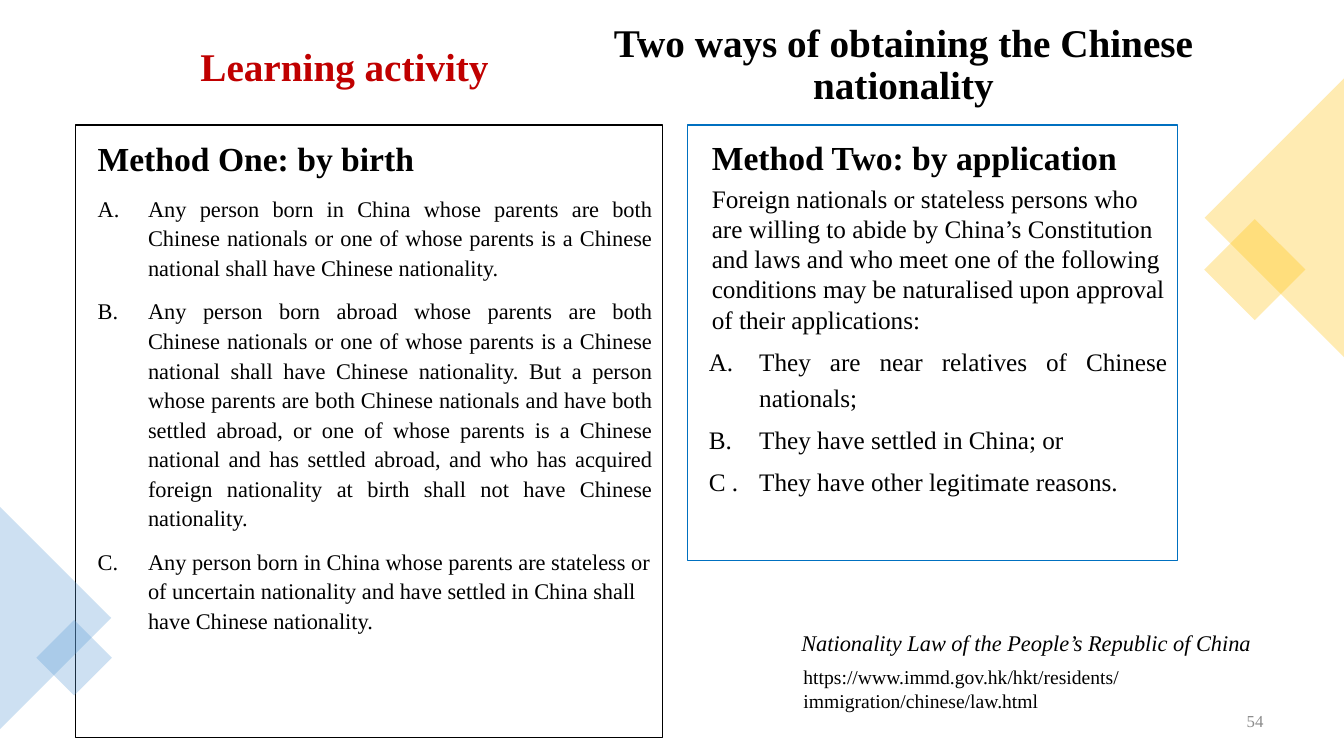
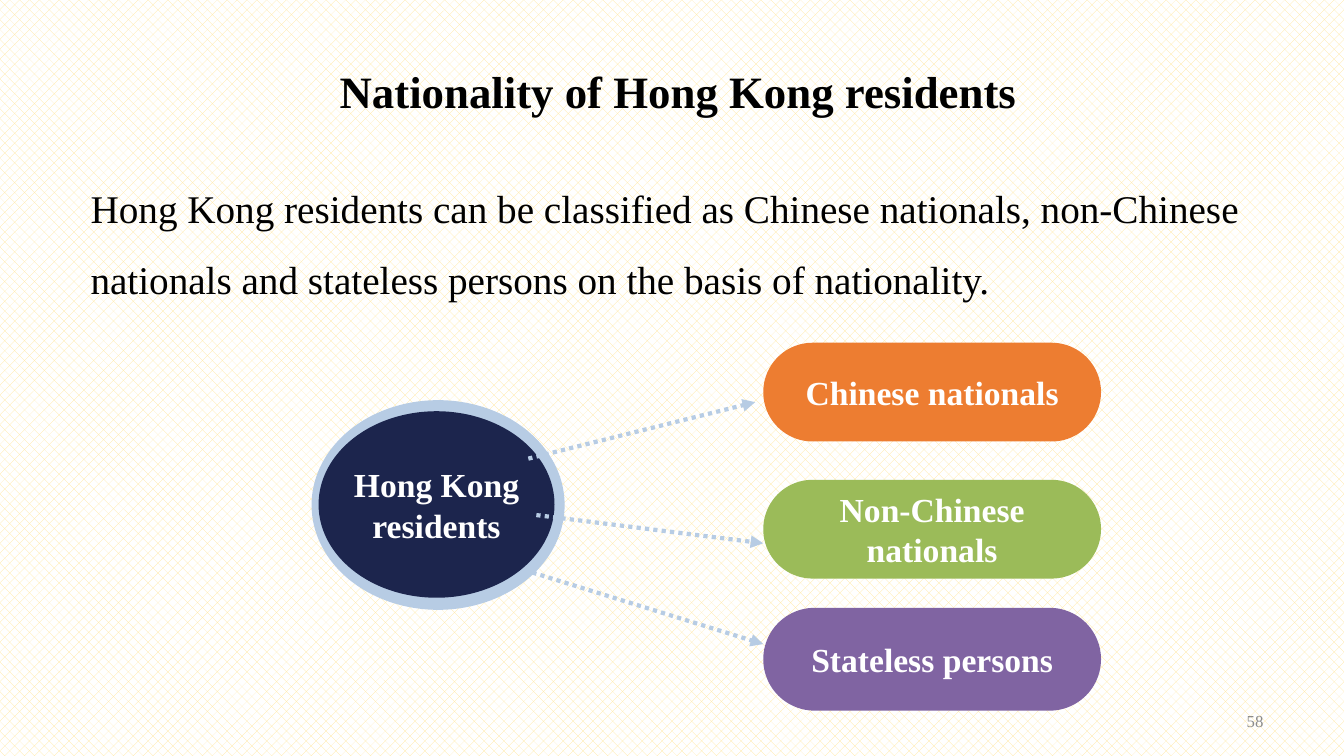
import pptx
import pptx.util
import pptx.dml.color
import pptx.enum.dml
import pptx.enum.shapes
import pptx.enum.text
import lxml.etree
from dataclasses import dataclass

Inches, Pt = pptx.util.Inches, pptx.util.Pt
Shape = pptx.enum.shapes.MSO_SHAPE
Align = pptx.enum.text.PP_ALIGN
Anchor = pptx.enum.text.MSO_ANCHOR


@dataclass(frozen=True)
class Theme:
    font: str = "Times New Roman"
    ink: str = "000000"
    white: str = "FFFFFF"
    cream: str = "FFE699"
    gray: str = "8C8C8C"
    red: str = "C00000"
    blue: str = "0070C0"
    gold: str = "FFC000"
    sky: str = "5B9BD5"
    pale: str = "B7CCE4"
    navy: str = "1C254D"
    orange: str = "ED7D31"
    green: str = "9BBB59"
    purple: str = "8064A2"
    title: int = 32
    large: int = 28
    head: int = 24
    text: int = 18
    small: int = 16
    link: int = 14
    note: int = 12


T = Theme()


def rgb(code):
    return pptx.dml.color.RGBColor.from_string(code)


def sub(node, tag, **attrs):
    """Add a drawing element to an XML node."""
    name = pptx.oxml.ns.qn("a:" + tag)
    return lxml.etree.SubElement(node, name, **attrs)


# Text
def para(frame, text, size, color=T.ink, bold=False, italic=False,
         align=Align.LEFT, lines=None, before=0, left=0, hang=0,
         number=False, tab=False):
    first = not frame.paragraphs[0].runs
    p = frame.paragraphs[0] if first else frame.add_paragraph()
    props = p._p.get_or_add_pPr()
    if left:
        props.set("marL", str(Inches(left)))
        props.set("indent", str(Inches(-hang)))
    if number:
        sub(props, "buAutoNum", type="alphaUcPeriod")
    if tab:
        stops = sub(props, "tabLst")
        sub(stops, "tab", pos=str(Inches(left)), algn="l")
    p.alignment = align
    if lines:
        p.line_spacing = lines
    if before and not first:
        p.space_before = Pt(before)
    run = p.add_run()
    run.text = text
    font = run.font
    font.name, font.size = T.font, Pt(size)
    font.bold, font.italic = bold, italic
    font.color.rgb = rgb(color)


def setup(frame, anchor=Anchor.TOP, pad=(0.1, 0.05, 0.1, 0.05), wrap=True):
    frame.word_wrap = wrap
    frame.vertical_anchor = anchor
    (frame.margin_left, frame.margin_top,
     frame.margin_right, frame.margin_bottom) = map(Inches, pad)
    return frame


def label(slide, box, text, size, anchor=Anchor.TOP, wrap=True, **style):
    shape = slide.shapes.add_textbox(*map(Inches, box))
    para(setup(shape.text_frame, anchor, wrap=wrap), text, size, **style)


# Shapes
def block(slide, kind, box, fill=None, line=None, width=1, turn=0, alpha=None):
    shape = slide.shapes.add_shape(kind, *map(Inches, box))
    shape.shadow.inherit = False
    shape.rotation = turn
    if fill:
        shape.fill.solid()
        shape.fill.fore_color.rgb = rgb(fill)
        if alpha:
            tint = shape.fill._xPr.find(".//" + pptx.oxml.ns.qn("a:srgbClr"))
            sub(tint, "alpha", val=str(alpha * 1000))
    else:
        shape.fill.background()
    if line:
        shape.line.color.rgb = rgb(line)
        shape.line.width = Pt(width)
    else:
        shape.line.fill.background()
    return shape


def badge(slide, kind, box, text, fill):
    shape = block(slide, kind, box, fill)
    if kind == Shape.ROUNDED_RECTANGLE:
        shape.adjustments[0] = 0.5
    frame = setup(shape.text_frame, Anchor.MIDDLE, (0, 0, 0, 0))
    para(frame, text, T.head, T.white, bold=True, align=Align.CENTER)


def arrow(slide, start, end):
    line = slide.shapes.add_connector(
        pptx.enum.shapes.MSO_CONNECTOR.STRAIGHT, *map(Inches, start + end))
    line.line.color.rgb = rgb(T.pale)
    line.line.width = Pt(3)
    line.line.dash_style = pptx.enum.dml.MSO_LINE.ROUND_DOT
    sub(line.line._get_or_add_ln(), "tailEnd", type="triangle")
    sub(line._element.spPr, "effectLst")


# Shared base of every slide
def base(deck):
    slide = deck.slides.add_slide(deck.slide_layouts[6])
    fill = slide.background.fill
    fill.patterned()
    fill.pattern = pptx.enum.dml.MSO_PATTERN.PERCENT_30
    fill.fore_color.rgb = rgb(T.cream)
    fill.back_color.rgb = rgb(T.white)
    return slide


def folio(slide, number):
    label(slide, (9.63, 6.95, 3, 0.4), str(number), T.note, Anchor.MIDDLE,
          color=T.gray, align=Align.RIGHT)


# Corner decoration: a large triangle and a small diamond
def corner(slide, peak, side, color, turn, gem):
    x, y = peak
    # The turned triangle is as wide as half its side
    box = (x - side / 2, y - side / 4, side, side / 2)
    block(slide, Shape.ISOSCELES_TRIANGLE, box, color, turn=turn, alpha=30)
    block(slide, Shape.RECTANGLE, gem, color, turn=45, alpha=30)


def birth(slide, box):
    shape = block(slide, Shape.RECTANGLE, box, line=T.ink, width=0.75)
    frame = setup(shape.text_frame)
    para(frame, "Method One: by birth", T.head, bold=True, lines=1.2,
         left=0.12)
    rules = (
        ("Any person born in China whose parents are both Chinese nationals "
         "or one of whose parents is a Chinese national shall have Chinese "
         "nationality.", Align.JUSTIFY),
        ("Any person born abroad whose parents are both Chinese nationals or "
         "one of whose parents is a Chinese national shall have Chinese "
         "nationality. But a person whose parents are both Chinese nationals "
         "and have both settled abroad, or one of whose parents is a Chinese "
         "national and has settled abroad, and who has acquired foreign "
         "nationality at birth shall not have Chinese nationality.",
         Align.JUSTIFY),
        ("Any person born in China whose parents are stateless or of "
         "uncertain nationality and have settled in China shall have Chinese "
         "nationality.", Align.LEFT),
    )
    for text, align in rules:
        para(frame, text, T.small, align=align, lines=1.1, before=10,
             left=0.62, hang=0.5, number=True)


def apply(slide, box):
    shape = block(slide, Shape.RECTANGLE, box, T.white, T.blue)
    frame = setup(shape.text_frame, pad=(0.12, 0.12, 0.1, 0.16))
    para(frame, "Method Two: by application", T.head, bold=True, left=0.12)
    para(frame, "Foreign nationals or stateless persons who are willing to "
         "abide by China’s Constitution and laws and who meet one of the "
         "following conditions may be naturalised upon approval of their "
         "applications:", T.text, before=4, left=0.12)
    for text in ("A.\tThey are near relatives of Chinese nationals;",
                 "B.\tThey have settled in China; or",
                 "C .\tThey have other legitimate reasons."):
        para(frame, text, T.text, align=Align.JUSTIFY, lines=1.2, before=4,
             left=0.59, hang=0.5, tab=True)


def credit(slide, x, y):
    label(slide, (x, y, 4.73, 0.37),
          "Nationality Law of the People’s Republic of China", T.small,
          wrap=False, italic=True)
    label(slide, (x + 0.02, y + 0.36, 4.31, 0.88),
          "https://www.immd.gov.hk/hkt/residents/immigration/chinese/law.html",
          T.link)


def methods(deck):
    slide = base(deck)
    block(slide, Shape.RECTANGLE, (0, 0, 13.33, 7.5), T.white)
    label(slide, (5.05, 0.07, 7.82, 1.17),
          "Two ways of obtaining the Chinese nationality", T.large,
          Anchor.MIDDLE, bold=True, align=Align.CENTER, lines=0.9)
    birth(slide, (0.75, 1.24, 5.82, 6.08))
    corner(slide, (12.64, 2.16), 2.77, T.gold, 270, (12.09, 2.32, 0.71, 0.71))
    corner(slide, (0.55, 6.13), 2.21, T.sky, 90, (0.47, 6.26, 0.53, 0.53))
    folio(slide, 54)
    apply(slide, (6.82, 1.24, 4.86, 4.32))
    credit(slide, 7.85, 6.19)
    label(slide, (1.89, 0.37, 3.07, 0.57), "Learning activity", T.large,
          color=T.red, bold=True)


# Classes branching from one hub
def tree(slide, x, y):
    block(slide, Shape.OVAL, (x, y + 0.57, 2.51, 2.08), T.pale)
    badge(slide, Shape.OVAL, (x + 0.07, y + 0.68, 2.34, 1.85),
          "Hong Kong residents", T.navy)
    for start, end in (((2.15, 1.15), (4.4, 0.59)),
                       ((2.23, 1.71), (4.48, 1.99)),
                       ((2.19, 2.28), (4.48, 2.99))):
        arrow(slide, (x + start[0], y + start[1]), (x + end[0], y + end[1]))
    for top, high, text, color in (
            (0, 0.98, "Chinese nationals", T.orange),
            (1.36, 0.98, "Non-Chinese nationals", T.green),
            (2.63, 1.02, "Stateless persons", T.purple)):
        badge(slide, Shape.ROUNDED_RECTANGLE,
              (x + 4.48, y + top, 3.35, high), text, color)


def classes(deck):
    slide = base(deck)
    label(slide, (0.8, 1.55, 11.92, 2.53),
          "Hong Kong residents can be classified as Chinese nationals, "
          "non-Chinese nationals and stateless persons on the basis of "
          "nationality.", T.large, lines=1.5)
    tree(slide, 3.09, 3.4)
    label(slide, (3.27, 0.58, 6.97, 0.64),
          "Nationality of Hong Kong residents", T.title, wrap=False, bold=True)
    folio(slide, 58)


def main():
    deck = pptx.Presentation()
    deck.slide_width, deck.slide_height = Inches(13.33), Inches(7.5)
    methods(deck)
    classes(deck)
    deck.save("out.pptx")


if __name__ == "__main__":
    main()
